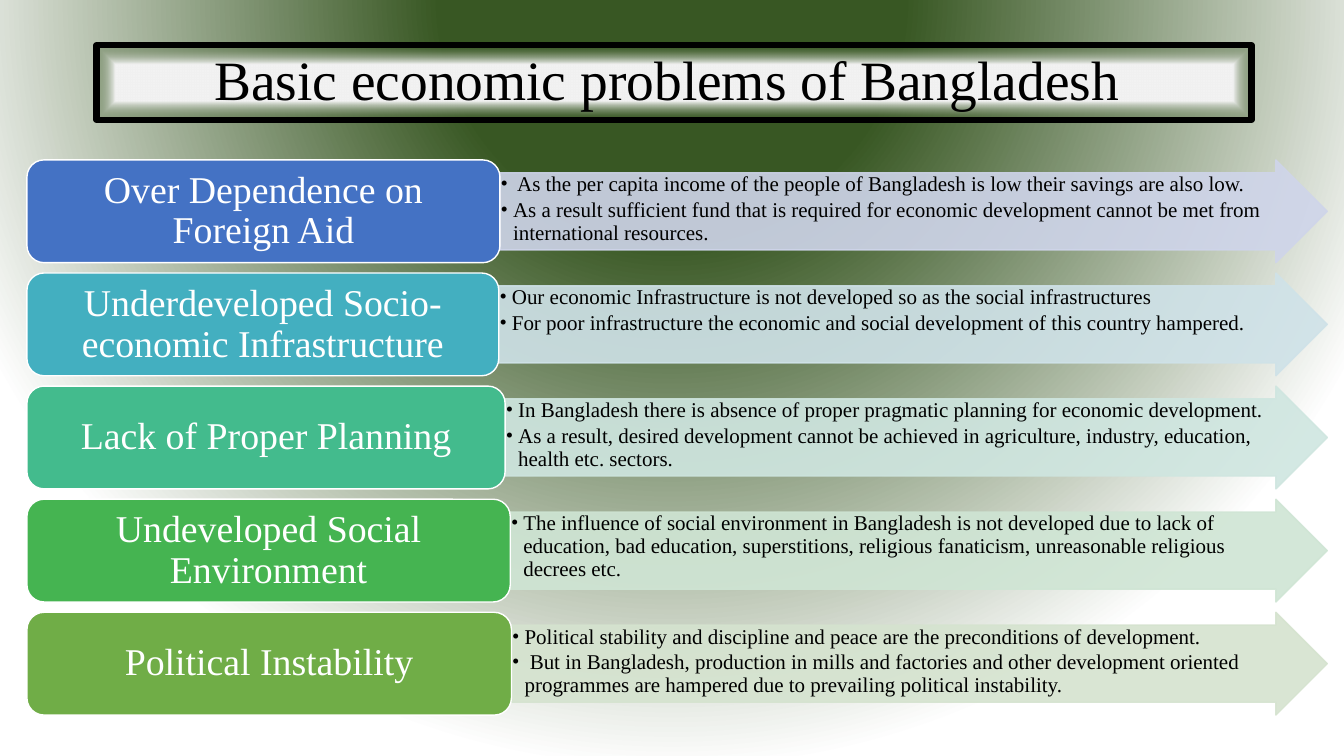
import pptx
import pptx.dml.color
import pptx.enum.shapes
import pptx.enum.text
import pptx.oxml
import pptx.oxml.ns
import pptx.util
from lxml import etree

Cm, Pt = pptx.util.Cm, pptx.util.Pt
SHAPE = pptx.enum.shapes.MSO_SHAPE
ALIGN = pptx.enum.text.PP_ALIGN
ANCHOR = pptx.enum.text.MSO_ANCHOR
qn = pptx.oxml.ns.qn

FONT = "Times New Roman"
TITLE = "Basic economic problems of Bangladesh "
# label, label width in cm, label colour, arrow colour, points
PROBLEMS = [
    ("Over Dependence on Foreign Aid", 11.92, "4472C4", "CFD5EA", [
        " As the per capita income of the people of Bangladesh is low their savings are also low.",
        "As a result sufficient fund that is required for economic development cannot be met "
        "from international resources."]),
    ("Underdeveloped Socio-economic Infrastructure", 11.89, "43AFC0", "CFE2E8", [
        "Our economic Infrastructure is not developed so as the social infrastructures",
        "For poor infrastructure the economic and social development of this country hampered."]),
    ("Lack of Proper Planning", 12.05, "43BB8D", "CFE6E0", [
        "In Bangladesh there is absence of proper pragmatic planning for economic development.",
        "As a result, desired development cannot be achieved in agriculture, industry, education, "
        "health etc. sectors."]),
    ("Undeveloped Social Environment", 12.18, "45B451", "CFE5D4", [
        "The influence of social environment in Bangladesh is not developed due to lack of "
        "education, bad education, superstitions, religious fanaticism, unreasonable religious "
        "decrees etc."]),
    ("Political Instability", 12.21, "70AD47", "D5E3CF", [
        "Political stability and discipline and peace are the preconditions of development.",
        " But in Bangladesh, production in mills and factories and other development oriented "
        "programmes are hampered due to prevailing political instability."]),
]
LEFT, TOP, PITCH, HEIGHT, ARROW_TIP = 0.68, 4.03, 2.85, 2.59, 33.45

LABEL_FRAME = dict(vertical_anchor=ANCHOR.MIDDLE, margin_left=Cm(0.27), margin_right=Cm(0.27),
                   margin_top=Cm(0.15), margin_bottom=Cm(0.15))
POINT_FRAME = dict(vertical_anchor=ANCHOR.TOP, margin_left=Cm(0.02), margin_right=Cm(0.5),
                   margin_top=Cm(0.02), margin_bottom=Cm(0.02))
CENTRED = dict(alignment=ALIGN.CENTER, line_spacing=0.9)
POINT = dict(alignment=ALIGN.LEFT, line_spacing=0.9, space_after=Pt(2.2))


def apply(target, values):
    for name, value in values.items():
        setattr(target, name, value)


def rgb(colour):
    return pptx.dml.color.RGBColor.from_string(colour)


def gradient(stops, shade, rect):
    """Return a path gradient; stops are (position, colour, opacity), in percent."""
    marks = "".join(
        f'<a:gs pos="{pos * 1000}"><a:srgbClr val="{colour}">'
        f'<a:alpha val="{opacity * 1000}"/></a:srgbClr></a:gs>' for pos, colour, opacity in stops)
    sides = " ".join(f'{side}="{value * 1000}"' for side, value in zip("ltrb", rect))
    return pptx.oxml.parse_xml(
        f'<a:gradFill {pptx.oxml.ns.nsdecls("a")} rotWithShape="1"><a:gsLst>{marks}</a:gsLst>'
        f'<a:path path="{shade}"><a:fillToRect {sides}/></a:path></a:gradFill>')


def replace_solid(parent, fill):
    parent.replace(parent.find(qn("a:solidFill")), fill)


def write(p, text, size, colour, values):
    apply(p, values)
    r = p.add_run()
    r.text = text
    apply(r.font, dict(size=Pt(size), name=FONT))
    r.font.color.rgb = rgb(colour)


def add_bullet(p):
    pPr = p._p.get_or_add_pPr()
    pPr.set("marL", str(Cm(0.31)))
    pPr.set("indent", str(-Cm(0.31)))
    etree.SubElement(pPr, qn("a:buFont")).set("typeface", FONT)
    etree.SubElement(pPr, qn("a:buChar")).set("char", "•")


def add_block(s, kind, left, top, width, fill, line, frame):
    sp = s.shapes.add_shape(kind, Cm(left), Cm(top), Cm(width), Cm(HEIGHT))
    sp.shadow.inherit = False
    sp.fill.solid()
    sp.fill.fore_color.rgb = rgb(fill)
    sp.line.color.rgb = rgb(line)
    sp.line.width = Pt(1)
    sp.text_frame.word_wrap = True
    apply(sp.text_frame, frame)
    return sp


def add_problem(s, top, label, width, label_colour, arrow_colour, points):
    arrow_left = LEFT + width
    arrow = add_block(s, SHAPE.RIGHT_ARROW, arrow_left, top, ARROW_TIP - arrow_left,
                      arrow_colour, arrow_colour, POINT_FRAME)
    arrow.adjustments[0] = 0.75
    arrow.adjustments[1] = 0.5
    for colour in arrow._element.spPr.iter(qn("a:srgbClr")):
        etree.SubElement(colour, qn("a:alpha")).set("val", "90000")
    tf = arrow.text_frame
    for i, text in enumerate(points):
        p = tf.add_paragraph() if i else tf.paragraphs[0]
        add_bullet(p)
        write(p, text, 15, "000000", POINT)

    sp = add_block(s, SHAPE.ROUNDED_RECTANGLE, LEFT, top, width, label_colour, "FFFFFF", LABEL_FRAME)
    write(sp.text_frame.paragraphs[0], label, 27, "FFFFFF", CENTRED)


def add_title(s):
    sp = s.shapes.title
    apply(sp, dict(left=Cm(2.43), top=Cm(1.14), width=Cm(29.11), height=Cm(1.88)))
    sp.fill.solid()
    replace_solid(sp._element.spPr, gradient([(49, "F2F2F2", 100), (99, "385723", 28)],
                                             "shape", (50, 50, 50, 50)))
    sp.line.color.rgb = rgb("000000")
    sp.line.width = Pt(4.5)
    apply(sp.text_frame, dict(vertical_anchor=ANCHOR.MIDDLE, word_wrap=True,
                              auto_size=pptx.enum.text.MSO_AUTO_SIZE.NONE))
    write(sp.text_frame.paragraphs[0], TITLE, 39.6, "000000", CENTRED)


def main():
    prs = pptx.Presentation()
    apply(prs, dict(slide_width=Cm(33.87), slide_height=Cm(19.05)))
    s = prs.slides.add_slide(prs.slide_layouts[5])
    s.background.fill.solid()
    replace_solid(s._element.cSld.bg.bgPr, gradient([(30, "385723", 100), (100, "FFFFFF", 100)],
                                                    "circle", (50, -80, 50, 180)))
    add_title(s)
    for i, problem in enumerate(PROBLEMS):
        add_problem(s, TOP + i * PITCH, *problem)
    prs.save("out.pptx")


if __name__ == "__main__":
    main()
